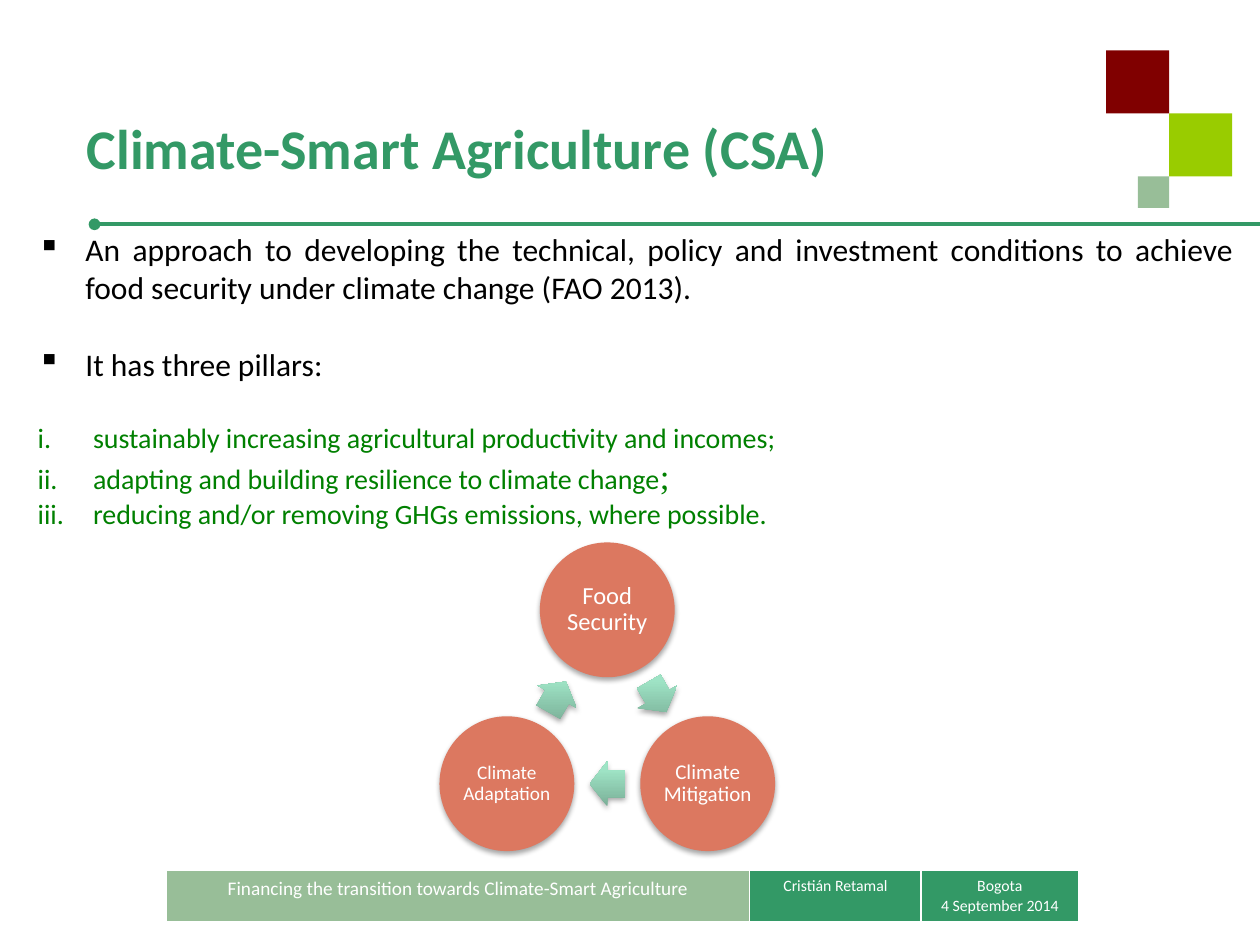
import math
from lxml import etree
from pptx import Presentation
from pptx.dml.color import RGBColor
from pptx.enum import shapes, text
from pptx.oxml import parse_xml
from pptx.oxml.ns import nsdecls, qn
from pptx.util import Inches, Pt

THEME = {
    "font": "Calibri", "accent_font": "Times New Roman",
    "green": "339966", "sage": "98BE98", "lime": "99CC00", "maroon": "800000",
    "pillar": "008000", "coral": "DC7860", "white": "FFFFFF", "black": "000000",
    "arrow_stops": [(0, "7AAF97"), (80, "9EE3C5"), (100, "9DE6C6")],
    "title": 32, "body": 18, "pillars": 16, "semicolon": 20, "topic": 11, "credit": 9,
}
TITLE = "Climate-Smart Agriculture (CSA)"
POINTS = [
    "An approach to developing the technical, policy and investment conditions "
    "to achieve food security under climate change (FAO 2013).",
    "It has three pillars:",
]
PILLARS = [
    ("sustainably increasing agricultural productivity and incomes;", ""),
    ("adapting and building resilience to climate change", ";"),
    ("reducing and/or removing GHGs emissions, where possible.", ""),
]
CYCLE = [("Food Security", 14), ("Climate Mitigation", 12), ("Climate Adaptation", 11)]
FOOTER = [
    (["Financing the transition towards Climate-Smart Agriculture"], 4.63, "topic", "sage"),
    (["Cristián Retamal"], 1.36, "credit", "green"),
    (["Bogota", "4 September 2014"], 1.25, "credit", "green"),
]
SQUARES = [
    (9.03, 1.4, 0.25, "sage"),
    (9.28, 0.9, 0.5, "lime"),
    (8.78, 0.4, 0.5, "maroon"),
]
CENTRE, RADIUS, CIRCLE, ARROW = (4.82, 5.76), 0.92, 1.07, (0.28, 0.36)
BLANK_LINE = Pt(22)


def rgb(name):
    return RGBColor.from_string(THEME[name])


def add_run(paragraph, words, size, color, font="font", bold=False):
    run = paragraph.add_run()
    run.text = words
    values = {"size": Pt(size), "name": THEME[font], "bold": bold}
    for key, value in values.items():
        setattr(run.font, key, value)
    run.font.color.rgb = rgb(color)


def format_frame(frame, **values):
    for key, value in {"word_wrap": True, **values}.items():
        setattr(frame, key, value)


def add_bullet(paragraph, indent, tag, **attributes):
    properties = paragraph._p.get_or_add_pPr()
    properties.set("marL", str(Inches(indent)))
    properties.set("indent", str(-Inches(indent)))
    etree.SubElement(properties, qn(tag), attributes)


def add_filled(slide, kind, left, top, width, height, color):
    shape = slide.shapes.add_shape(
        kind, Inches(left), Inches(top), Inches(width), Inches(height))
    shape.shadow.inherit = False
    shape.line.fill.background()
    shape.fill.solid()
    shape.fill.fore_color.rgb = rgb(color)
    return shape


def add_shadow(shape):
    properties = shape._element.spPr
    properties.remove(properties.find(qn("a:effectLst")))
    properties.append(parse_xml(
        f'<a:effectLst {nsdecls("a")}><a:outerShdw blurRad="{Pt(3.1)}" dist="{Pt(1.8)}" '
        f'dir="5400000" rotWithShape="0"><a:srgbClr val="{THEME["black"]}">'
        '<a:alpha val="35000"/></a:srgbClr></a:outerShdw></a:effectLst>'))


def set_gradient(shape):
    stops = "".join(
        f'<a:gs pos="{position * 1000}"><a:srgbClr val="{color}"/></a:gs>'
        for position, color in THEME["arrow_stops"])
    properties = shape._element.spPr
    properties.replace(properties.find(qn("a:solidFill")), parse_xml(
        f'<a:gradFill {nsdecls("a")} rotWithShape="0"><a:gsLst>{stops}</a:gsLst>'
        '<a:lin ang="16200000" scaled="0"/></a:gradFill>'))


def add_decoration(slide):
    rule = slide.shapes.add_connector(
        shapes.MSO_CONNECTOR.STRAIGHT, Inches(0.75), Inches(1.78), Inches(10), Inches(1.78))
    rule.line.color.rgb = rgb("green")
    rule.line.width = Pt(2.25)
    etree.SubElement(rule.line._get_or_add_ln(), qn("a:headEnd"), type="oval")
    etree.SubElement(rule._element.spPr, qn("a:effectLst"))
    for left, top, side, color in SQUARES:
        add_filled(slide, shapes.MSO_SHAPE.RECTANGLE, left, top, side, side, color)


def add_footer(slide):
    width = sum(column[1] for column in FOOTER)
    table = slide.shapes.add_table(
        1, len(FOOTER), Inches(1.32), Inches(6.91), Inches(width), Inches(0.4)).table
    for index, (lines, width, size, fill) in enumerate(FOOTER):
        table.columns[index].width = Inches(width)
        cell = table.cell(0, index)
        cell.fill.solid()
        cell.fill.fore_color.rgb = rgb(fill)
        for number, line in enumerate(lines):
            frame = cell.text_frame
            paragraph = frame.add_paragraph() if number else frame.paragraphs[0]
            paragraph.alignment = text.PP_ALIGN.CENTER
            add_run(paragraph, line, THEME[size], "white")


def add_title(slide):
    box = slide.shapes.add_textbox(Inches(0.59), Inches(0.91), Inches(8.03), Inches(0.77))
    format_frame(box.text_frame, vertical_anchor=text.MSO_ANCHOR.MIDDLE,
                 margin_bottom=Inches(0.31))
    add_run(box.text_frame.paragraphs[0], TITLE, THEME["title"], "green", bold=True)


def add_body(slide):
    box = slide.shapes.add_textbox(Inches(0.2), Inches(1.78), Inches(9.69), Inches(2.83))
    frame = box.text_frame
    format_frame(frame)
    for index, point in enumerate(POINTS):
        paragraph = frame.add_paragraph() if index else frame.paragraphs[0]
        paragraph.alignment = text.PP_ALIGN.JUSTIFY
        paragraph.space_after = BLANK_LINE
        add_bullet(paragraph, 0.38, "a:buChar", char="▪")
        add_run(paragraph, point, THEME["body"], "black")
    for pillar, ending in PILLARS:
        paragraph = frame.add_paragraph()
        add_bullet(paragraph, 0.44, "a:buAutoNum", type="romanLcPeriod")
        add_run(paragraph, pillar, THEME["pillars"], "pillar")
        if ending:
            add_run(paragraph, ending, THEME["semicolon"], "pillar", "accent_font")


def add_cycle(slide):
    step = 360 / len(CYCLE)
    angles = [math.radians(step * index - 90) for index in range(len(CYCLE))]
    centres = [(CENTRE[0] + RADIUS * math.cos(angle), CENTRE[1] + RADIUS * math.sin(angle))
               for angle in angles]
    for index, (label, size) in enumerate(CYCLE):
        x, y = centres[index]
        circle = add_filled(slide, shapes.MSO_SHAPE.OVAL, x - CIRCLE / 2, y - CIRCLE / 2,
                            CIRCLE, CIRCLE, "coral")
        add_shadow(circle)
        margins = {f"margin_{side}": Inches(0.02) for side in ("left", "top", "right", "bottom")}
        format_frame(circle.text_frame, vertical_anchor=text.MSO_ANCHOR.MIDDLE, **margins)
        paragraph = circle.text_frame.paragraphs[0]
        paragraph.alignment = text.PP_ALIGN.CENTER
        paragraph.line_spacing = 0.9
        add_run(paragraph, label, size, "white")

        next_x, next_y = centres[(index + 1) % len(CYCLE)]
        width, height = ARROW
        arrow = add_filled(slide, shapes.MSO_SHAPE.RIGHT_ARROW, (x + next_x - width) / 2,
                           (y + next_y - height) / 2, width, height, "sage")
        arrow.adjustments[0] = 0.6
        arrow.rotation = step * index + step / 2
        set_gradient(arrow)
        add_shadow(arrow)


def main():
    presentation = Presentation()
    presentation.slide_width, presentation.slide_height = Inches(10), Inches(7.5)
    slide = presentation.slides.add_slide(presentation.slide_layouts[6])
    for add_part in (add_decoration, add_footer, add_title, add_body, add_cycle):
        add_part(slide)
    presentation.save("out.pptx")


if __name__ == "__main__":
    main()
